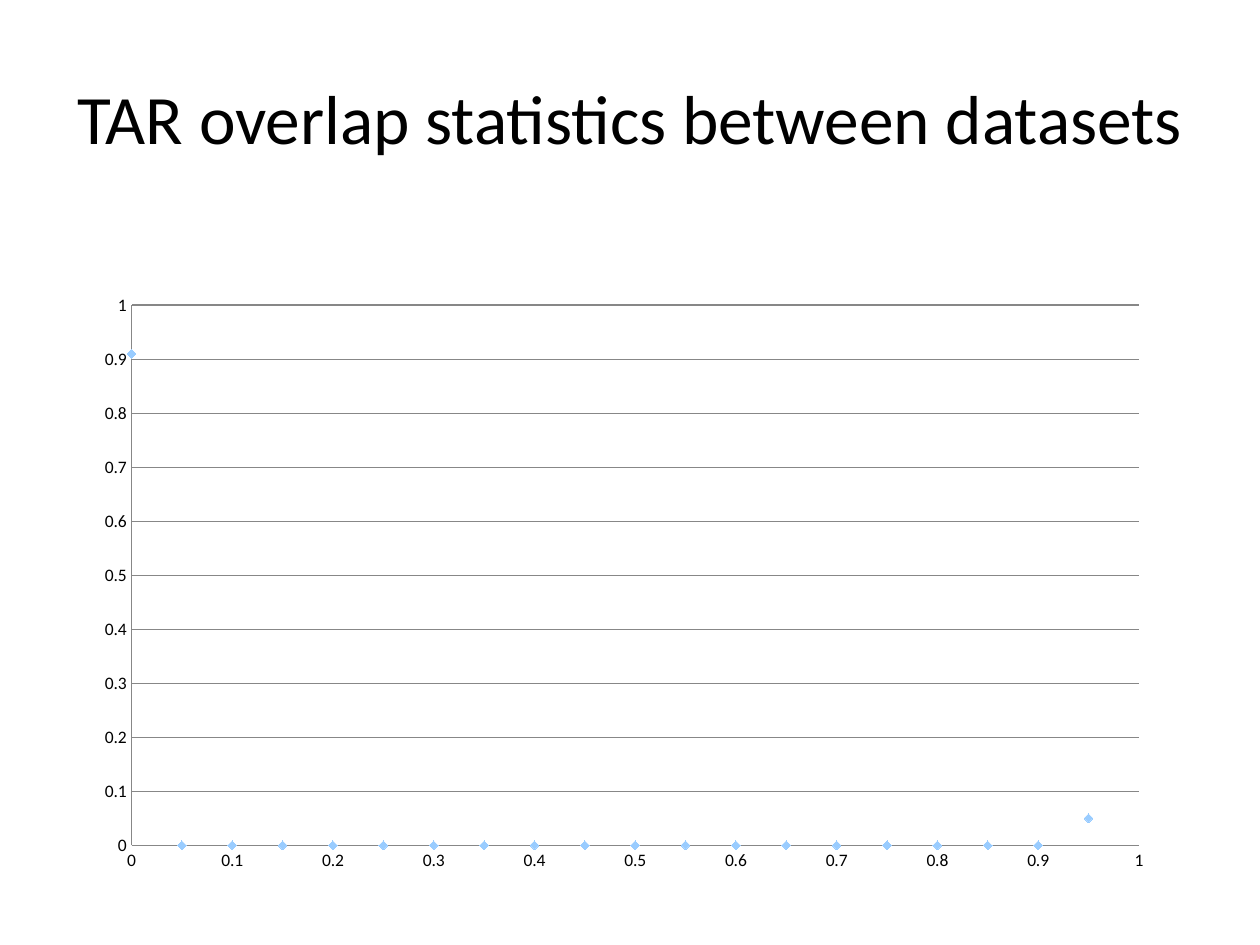
from lxml import etree
from pptx import Presentation
from pptx import util as u
from pptx.chart import data
from pptx.dml.color import RGBColor
from pptx.enum import chart as charts, text

SCALE = u.Inches(1) // 126
FONT = "Calibri"
BLACK = RGBColor(0x00, 0x00, 0x00)
GRAY = RGBColor(0x87, 0x87, 0x87)
LIGHT_BLUE = RGBColor(0x99, 0xCC, 0xFF)
OVERLAP_SHARES = [0.91] + [0] * 18 + [0.05]
PLOT_LAYOUT = {"layoutTarget": "inner", "xMode": "edge", "yMode": "edge",
               "x": 0.044, "y": 0.037, "w": 0.932, "h": 0.902}


def px(*lengths):
    """Turn pixel lengths into EMU."""
    return [u.Emu(length * SCALE) for length in lengths]


def add_title(slide, wording, box):
    """Add a centred title on one line."""
    shape = slide.shapes.add_textbox(*px(*box))
    frame = shape.text_frame
    frame.word_wrap = True
    frame.margin_left = frame.margin_right = 0
    frame.vertical_anchor = text.MSO_ANCHOR.MIDDLE
    paragraph = frame.paragraphs[0]
    paragraph.alignment = text.PP_ALIGN.CENTER
    run = paragraph.add_run()
    run.text = wording
    run.font.name = FONT
    run.font.size = u.Pt(39.6)
    run.font.color.rgb = BLACK


def style_axis(axis, step):
    """Set a zero-to-one scale with plain labels and no tick marks."""
    axis.minimum_scale, axis.maximum_scale = 0, 1
    axis.major_unit = step
    axis.major_tick_mark = axis.minor_tick_mark = charts.XL_TICK_MARK.NONE
    axis.tick_labels.number_format = "General"
    axis.tick_labels.number_format_is_linked = False
    axis.format.line.color.rgb = GRAY
    axis.format.line.width = u.Pt(0.75)


def set_plot_layout(chart):
    """Fix the inner plot area inside the chart frame."""
    plot_area = chart.plots[0]._element.getparent()
    namespace = etree.QName(plot_area).namespace
    for old_layout in plot_area.findall(f"{{{namespace}}}layout"):
        plot_area.remove(old_layout)
    layout = etree.Element(f"{{{namespace}}}layout")
    manual = etree.SubElement(layout, f"{{{namespace}}}manualLayout")
    for name, value in PLOT_LAYOUT.items():
        etree.SubElement(manual, f"{{{namespace}}}{name}", val=str(value))
    plot_area.insert(0, layout)


def add_scatter(slide, values, box):
    """Add a marker-only scatter chart with evenly spaced x values."""
    chart_data = data.XyChartData()
    points = chart_data.add_series("Series 1")
    for index, value in enumerate(values):
        points.add_data_point(round(index / len(values), 2), value)
    chart = slide.shapes.add_chart(
        charts.XL_CHART_TYPE.XY_SCATTER, *px(*box), chart_data).chart
    chart.has_title = chart.has_legend = False
    chart.font.name = FONT
    chart.font.size = u.Pt(10)
    chart.font.color.rgb = BLACK
    chart.plots[0].vary_by_categories = False
    for axis in (chart.category_axis, chart.value_axis):
        style_axis(axis, 0.1)
    chart.category_axis.has_major_gridlines = False
    chart.value_axis.has_major_gridlines = True
    gridline = chart.value_axis.major_gridlines.format.line
    gridline.color.rgb = GRAY
    gridline.width = u.Pt(0.75)
    series = chart.plots[0].series[0]
    series.smooth = False
    series.format.line.fill.background()
    series.marker.style = charts.XL_MARKER_STYLE.DIAMOND
    series.marker.size = 5
    series.marker.format.fill.solid()
    series.marker.format.fill.fore_color.rgb = LIGHT_BLUE
    series.marker.format.line.color.rgb = LIGHT_BLUE
    set_plot_layout(chart)


def main():
    """Build and save the slide."""
    presentation = Presentation()
    presentation.slide_width, presentation.slide_height = px(1260, 945)
    slide = presentation.slides.add_slide(presentation.slide_layouts[6])
    add_title(slide, "TAR overlap statistics between datasets", (63, 38, 1134, 157))
    add_scatter(slide, OVERLAP_SHARES, (84, 283, 1081, 599))
    presentation.save("out.pptx")


if __name__ == "__main__":
    main()
